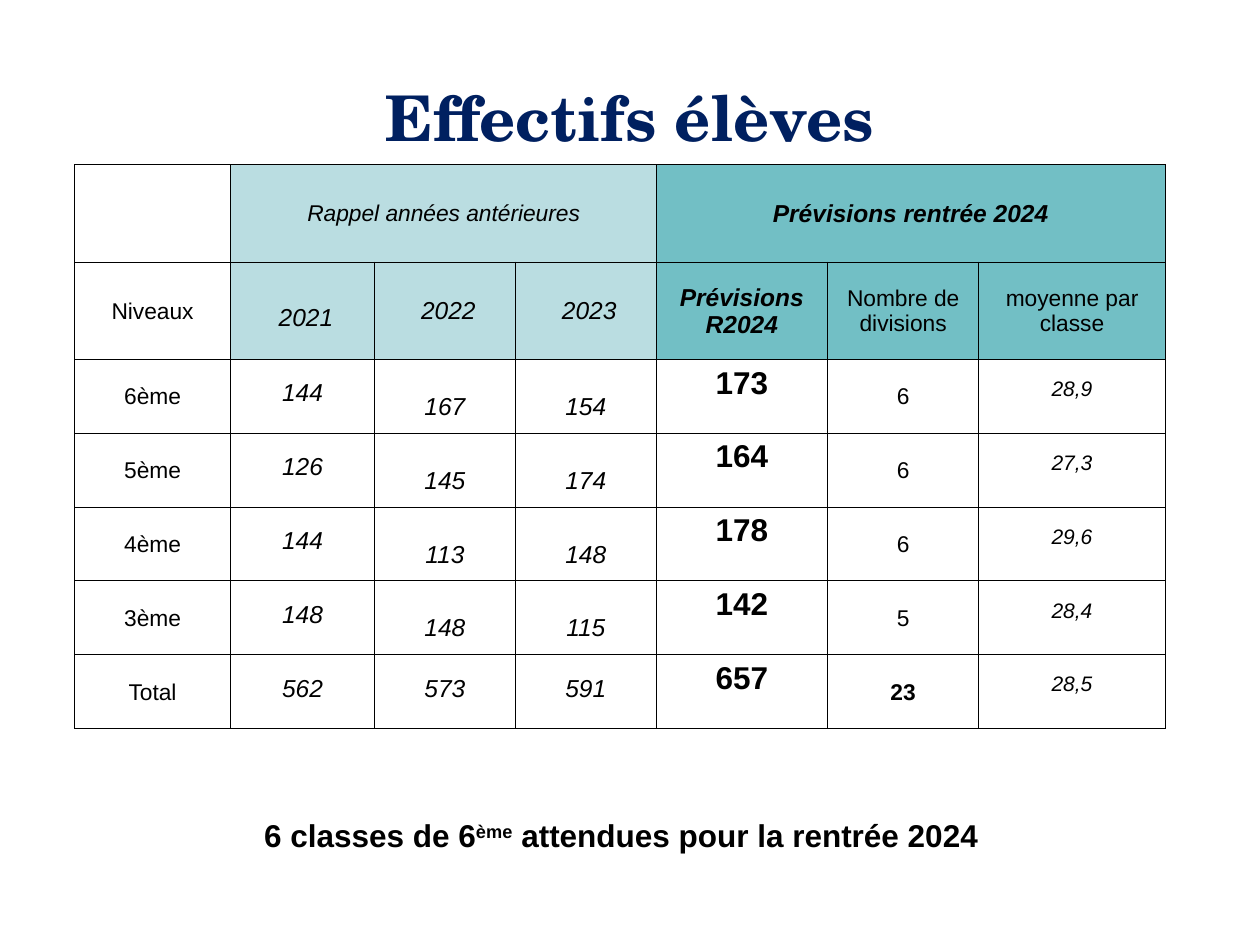
from dataclasses import dataclass

from lxml.etree import SubElement as Sub
from pptx import Presentation
from pptx.dml.color import RGBColor as Rgb
from pptx.enum.text import MSO_ANCHOR as Anchor, PP_ALIGN as Align
from pptx.oxml.ns import qn
from pptx.util import Cm, Pt


@dataclass(frozen=True)
class Theme:
    head: str = "TeX Gyre Schola"
    body: str = "Arial"
    navy: str = "002060"
    ink: str = "000000"
    pale: str = "BADDE1"
    teal: str = "72BFC5"
    title: int = 36
    big: int = 18
    mid: int = 14
    base: int = 13
    small: int = 12
    rule: float = 0.5


@dataclass(frozen=True)
class Look:
    size: int
    bold: bool = False
    slant: bool = False
    lead: float = 1.0
    snug: bool = True


T = Theme()
PLAIN = Look(T.base)
STRONG = Look(T.base, bold=True)
GROUP = Look(T.base, slant=True)
YEAR = Look(T.mid, slant=True)
TALL = Look(T.mid, slant=True, lead=1.5)
PLAN = Look(T.mid, bold=True, slant=True)
PAST = Look(T.mid, slant=True, lead=1.5, snug=False)
LOW = Look(T.mid, slant=True, lead=2.0, snug=False)
COUNT = Look(T.big, bold=True, snug=False)
MEAN = Look(T.small, slant=True, lead=1.5, snug=False)

COLS = [3.15, 2.9, 2.84, 2.84, 3.45, 3.05, 3.76]
ROWS = [1.96] * 2 + [1.49] * 5
FILLS = [None] + [T.pale] * 3 + [T.teal] * 3
GROUPS = [(1, "Rappel années antérieures", GROUP), (4, "Prévisions rentrée 2024", PLAN)]
HEADS = ["Niveaux", " 2021", " 2022", " 2023", "Prévisions R2024",
         "Nombre de divisions", "moyenne par classe"]
DATA = [
    ["6ème", "144", "167", "154", "173", "6", "28,9"],
    ["5ème", "126", "145", "174", "164", "6", "27,3"],
    ["4ème", "144", "113", "148", "178", "6", "29,6"],
    ["3ème", "148", "148", "115", "142", "5", "28,4"],
    ["Total", "562", "573", "591", "657", "23", "28,5"],
]
HEAD = [PLAIN, TALL, YEAR, YEAR, PLAN, PLAIN, PLAIN]
LEVEL = [PLAIN, PAST, LOW, LOW, COUNT, PLAIN, MEAN]
TOTAL = [PLAIN, PAST, PAST, PAST, COUNT, STRONG, MEAN]


def style(font, name, size, tint, bold=False, slant=False):
    font.name, font.size = name, Pt(size)
    font.bold, font.italic = bold, slant
    font.color.rgb = Rgb.from_string(tint)


def place(shape, box):
    shape.left, shape.top, shape.width, shape.height = map(Cm, box)


def frame(cell):
    props = cell._tc.get_or_add_tcPr()
    for side in ("lnL", "lnR", "lnT", "lnB"):
        line = Sub(props, qn(f"a:{side}"), w=str(Pt(T.rule)))
        fill = Sub(line, qn("a:solidFill"))
        Sub(fill, qn("a:srgbClr"), val=T.ink)


def paint(cell, tint):
    if tint:
        cell.fill.solid()
        cell.fill.fore_color.rgb = Rgb.from_string(tint)
    else:
        cell.fill.background()


def write(cell, text, look):
    cell.text_frame.text = text
    para = cell.text_frame.paragraphs[0]
    para.alignment = Align.CENTER
    para.line_spacing = look.lead
    style(para.runs[0].font, T.body, look.size, T.ink, look.bold, look.slant)
    if look.snug:
        cell.vertical_anchor = Anchor.MIDDLE
        cell.margin_left = cell.margin_right = cell.margin_top = Cm(0.03)
        cell.margin_bottom = 0


def add_title(slide, box):
    title = slide.shapes.title
    place(title, box)
    title.text_frame.text = "Effectifs élèves"
    title.text_frame.vertical_anchor = Anchor.MIDDLE
    para = title.text_frame.paragraphs[0]
    para.alignment = Align.CENTER
    style(para.runs[0].font, T.head, T.title, T.navy, bold=True)


def add_grid(slide, left, top):
    box = map(Cm, (left, top, sum(COLS), sum(ROWS)))
    grid = slide.shapes.add_table(len(ROWS), len(COLS), *box).table
    grid.first_row = grid.horz_banding = False
    for col, width in zip(grid.columns, COLS):
        col.width = Cm(width)
    for row, height in zip(grid.rows, ROWS):
        row.height = Cm(height)
    for r in range(len(ROWS)):
        for c, tint in enumerate(FILLS):
            frame(grid.cell(r, c))
            paint(grid.cell(r, c), tint if r < 2 else None)
    for c, text, look in GROUPS:
        grid.cell(0, c).merge(grid.cell(0, c + 2))
        write(grid.cell(0, c), text, look)
    looks = [HEAD] + [LEVEL] * 4 + [TOTAL]
    for r, (texts, line) in enumerate(zip([HEADS] + DATA, looks), 1):
        for c, (text, look) in enumerate(zip(texts, line)):
            write(grid.cell(r, c), text, look)


def add_note(slide, box):
    note = slide.shapes.add_textbox(*map(Cm, box))
    note.text_frame.word_wrap = True
    para = note.text_frame.paragraphs[0]
    para.alignment = Align.CENTER
    parts = [("6 classes de 6", 0), ("ème", 30000),
             (" attendues pour la rentrée 2024 ", 0)]
    for text, lift in parts:
        run = para.add_run()
        run.text = text
        style(run.font, T.body, T.big, T.ink, bold=True)
        if lift:
            run._r.get_or_add_rPr().set("baseline", str(lift))


def main():
    deck = Presentation()
    deck.slide_width, deck.slide_height = Cm(25.4), Cm(19.05)
    slide = deck.slides.add_slide(deck.slide_layouts[5])
    add_title(slide, (1.27, 0.76, 22.86, 3.18))
    add_grid(slide, 1.5, 3.32)
    add_note(slide, (2.31, 16.33, 20.6, 1.02))
    deck.save("out.pptx")


if __name__ == "__main__":
    main()
